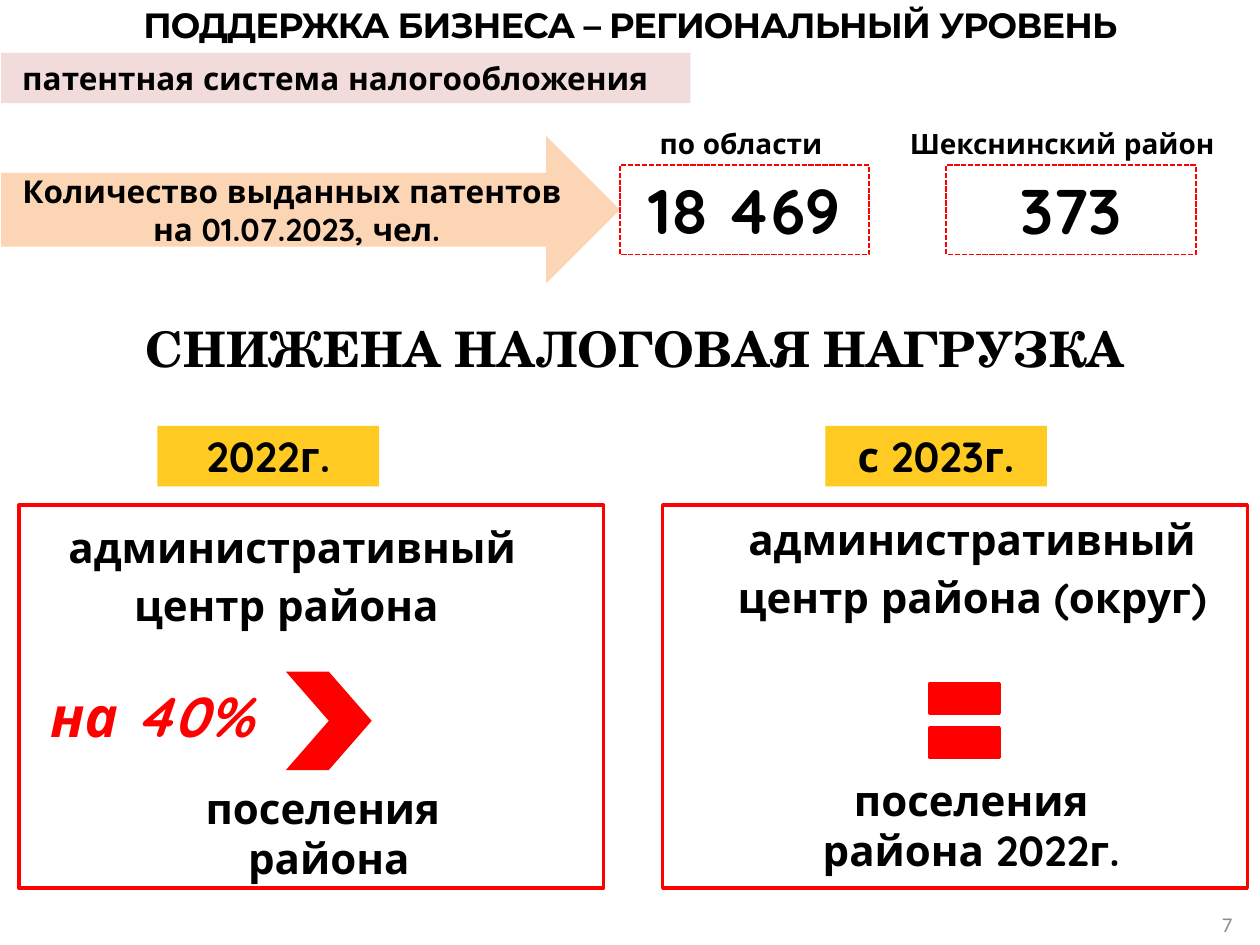
"""Build the slide on regional business support through the patent tax system."""
import dataclasses

import pptx
import pptx.dml.color
import pptx.enum.dml
import pptx.enum.shapes
import pptx.enum.text
import pptx.util

Pt = pptx.util.Pt
Shape = pptx.enum.shapes.MSO_SHAPE
Align = pptx.enum.text.PP_ALIGN
Anchor = pptx.enum.text.MSO_ANCHOR
AutoSize = pptx.enum.text.MSO_AUTO_SIZE


@dataclasses.dataclass(frozen=True)
class Theme:
    black: str = "000000"
    red: str = "FF0000"
    yellow: str = "FFCA21"
    peach: str = "FCD5B5"
    pink: str = "F2DCDB"
    grey: str = "8C8C8C"
    body_font: str = "Quicksand"
    title_font: str = "Montserrat"
    heading_font: str = "TeX Gyre Schola"
    number_font: str = "Calibri"
    page_size: int = 12
    caption_size: int = 16
    label_size: int = 18
    title_size: int = 20
    body_size: int = 24
    heading_size: int = 28
    percent_size: int = 32
    count_size: int = 36
    wide_inset: tuple = (7.2, 3.6)
    slim_inset: tuple = (5.4, 2.7)


class Composer:
    def __init__(self, theme, page):
        self.theme = theme
        self.page = page

    def color(self, value):
        return pptx.dml.color.RGBColor.from_string(value)

    def fill_text(self, box, lines, size, font=None, color=None, bold=True, italic=False,
                  align=Align.CENTER, anchor=Anchor.TOP, inset=None, spacing=None,
                  grow=True, tracking=None):
        frame = box.text_frame
        frame.word_wrap = True
        frame.auto_size = AutoSize.SHAPE_TO_FIT_TEXT if grow else AutoSize.NONE
        frame.vertical_anchor = anchor
        side, edge = inset or self.theme.slim_inset
        frame.margin_left = frame.margin_right = Pt(side)
        frame.margin_top = frame.margin_bottom = Pt(edge)
        for index, line in enumerate(lines):
            para = frame.add_paragraph() if index else frame.paragraphs[0]
            para.alignment = align
            if spacing:
                para.line_spacing = spacing
            span = para.add_run()
            span.text = line
            span.font.name = font or self.theme.body_font
            span.font.size = Pt(size)
            span.font.bold = bold
            span.font.italic = italic
            span.font.color.rgb = self.color(color or self.theme.black)
            if tracking:
                span._r.get_or_add_rPr().set("spc", str(tracking))

    def title(self, area, line):
        box = self.page.shapes.title
        box.left, box.top, box.width, box.height = map(Pt, area)
        self.fill_text(box, [line], self.theme.title_size, self.theme.title_font,
                       inset=self.theme.wide_inset, tracking=-50)

    def text(self, area, lines, size, **style):
        box = self.page.shapes.add_textbox(*map(Pt, area))
        self.fill_text(box, lines, size, **style)

    def shape(self, kind, area, fill=None, line=None, weight=2, dashed=False):
        box = self.page.shapes.add_shape(kind, *map(Pt, area))
        box.shadow.inherit = False
        if fill:
            box.fill.solid()
            box.fill.fore_color.rgb = self.color(fill)
        else:
            box.fill.background()
        if line:
            box.line.color.rgb = self.color(line)
            box.line.width = Pt(weight)
            if dashed:
                box.line.dash_style = pptx.enum.dml.MSO_LINE.SQUARE_DOT
        else:
            box.line.fill.background()
        return box

    def year(self, left, line):
        box = self.shape(Shape.RECTANGLE, (left, 243.4, 126.7, 34.6), self.theme.yellow)
        self.fill_text(box, [line], self.theme.body_size)

    def frame(self, left):
        self.shape(Shape.RECTANGLE, (left, 288.7, 334.1, 218.9), line=self.theme.red)

    def count(self, left, value, caption_left, caption_width, caption):
        box = self.shape(Shape.RECTANGLE, (left, 94.3, 142.6, 51.1),
                         line=self.theme.red, weight=1, dashed=True)
        self.fill_text(box, [value], self.theme.count_size, inset=self.theme.wide_inset)
        self.text((caption_left, 69.1, caption_width, 25.2), [caption],
                  self.theme.caption_size, anchor=Anchor.MIDDLE)


def main():
    theme = Theme()
    deck = pptx.Presentation()
    deck.slide_width, deck.slide_height = Pt(720), Pt(540)
    page = deck.slides.add_slide(deck.slide_layouts[5])
    composer = Composer(theme, page)

    composer.title((0, -1.4, 720, 31.7), "ПОДДЕРЖКА БИЗНЕСА – РЕГИОНАЛЬНЫЙ УРОВЕНЬ")
    band = composer.shape(Shape.RECTANGLE, (0.7, 30.2, 393.8, 28.8), theme.pink)
    composer.fill_text(band, ["патентная система налогообложения"], theme.label_size,
                       align=Align.LEFT, inset=(12, 3.6))
    arrow = composer.shape(Shape.RIGHT_ARROW, (0.7, 77.8, 353.5, 84.2), theme.peach)
    composer.fill_text(arrow, ["Количество выданных патентов", " на 01.07.2023, чел."],
                       theme.label_size, anchor=Anchor.MIDDLE, inset=theme.wide_inset,
                       grow=False)
    composer.count(354.2, "18 469", 355.7, 135.4, "по области")
    composer.count(540.7, "373", 513.4, 187.2, "Шекснинский район")
    composer.text((2.9, 179.3, 720, 39.6), ["СНИЖЕНА НАЛОГОВАЯ НАГРУЗКА"],
                  theme.heading_size, font=theme.heading_font)

    composer.year(90, "2022г.")
    composer.frame(10.8)
    composer.text((25.2, 290.9, 283.7, 72), ["административный центр района "],
                  theme.body_size, spacing=1.15)
    composer.text((10.8, 386.6, 151.9, 43.9), ["на 40%"], theme.percent_size,
                  color=theme.red, italic=True)
    composer.shape(Shape.CHEVRON, (163.4, 383.8, 49, 56.2), theme.red)
    composer.text((100.1, 444.2, 175.7, 63.4), ["поселения ", "района"], theme.body_size)

    composer.year(471.6, "с 2023г.")
    composer.frame(378.7)
    composer.text((399.6, 286.6, 311.8, 72), ["административный центр района (округ)"],
                  theme.body_size, spacing=1.15)
    composer.shape(Shape.MATH_EQUAL, (524.2, 375.8, 54, 72), theme.red, theme.red)
    composer.text((450.7, 439.9, 215.3, 63.4), ["поселения ", "района 2022г. "],
                  theme.body_size)

    composer.text((543.6, 513.4, 167.8, 28.8), ["7"], theme.page_size,
                  font=theme.number_font, color=theme.grey, bold=False,
                  align=Align.RIGHT, anchor=Anchor.MIDDLE, inset=theme.wide_inset,
                  grow=False)
    deck.save("out.pptx")


if __name__ == "__main__":
    main()
